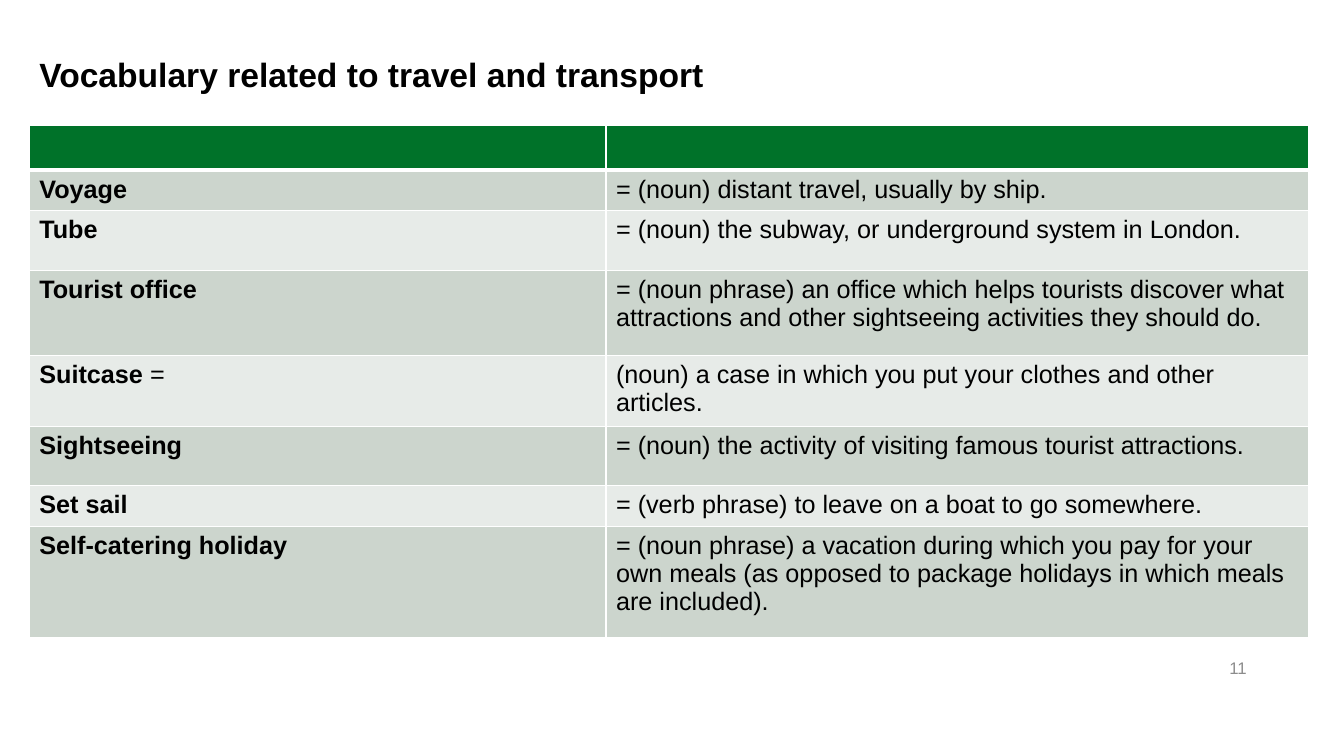
from lxml.etree import SubElement
from pptx import Presentation
from pptx.dml.color import RGBColor
from pptx.enum.text import MSO_ANCHOR as Anchor, MSO_AUTO_SIZE as AutoSize, PP_ALIGN as Align
from pptx.oxml.ns import qn
from pptx.util import Inches, Pt

WIDTH, HEIGHT = Inches(13.33), Inches(7.5)
LEFT = 2.18
GREEN, BANDS = "007229", ("CCD5CD", "E7EBE8")
COLUMN_SHARES = (42.91, 52.29)
HEADER_SHARE = 6
VOCABULARY = [
    ("Voyage", "", "= (noun) distant travel, usually by ship.", 4.53),
    ("Tube", "", "= (noun) the subway, or underground system in London.", 7.87),
    ("Tourist office", "", "= (noun phrase) an office which helps tourists discover what "
     "attractions and other sightseeing activities they should do.", 11.33),
    ("Suitcase", " =", "(noun) a case in which you put your clothes and other articles.", 7.87),
    ("Sightseeing", "", "= (noun) the activity of visiting famous tourist attractions.", 7.87),
    ("Set sail", "", "= (verb phrase) to leave on a boat to go somewhere.", 4.53),
    ("Self-catering holiday", "", "= (noun phrase) a vacation during which you pay for your own "
     "meals (as opposed to package holidays in which meals are included).", 14.67),
]


def across(percent):
    return round(WIDTH * percent / 100)


def down(percent):
    return round(HEIGHT * percent / 100)


def frame(left, top, width, height):
    return across(left), down(top), across(width), down(height)


def color(code):
    return RGBColor.from_string(code)


def apply(target, formats):
    for key, value in formats.items():
        setattr(target, key, value)


def write(paragraph, text, size=18, bold=False, ink="000000"):
    run = paragraph.add_run()
    run.text = text
    apply(run.font, {"name": "Arial", "size": Pt(size), "bold": bold})
    run.font.color.rgb = color(ink)


def style_cell(cell, fill, bottom=1):
    properties = cell._tc.get_or_add_tcPr()
    for side, points in {"lnL": 1, "lnR": 1, "lnT": 1, "lnB": bottom}.items():
        border = SubElement(properties, qn(f"a:{side}"), w=str(Pt(points)))
        SubElement(SubElement(border, qn("a:solidFill")), qn("a:srgbClr"), val="FFFFFF")
    cell.fill.solid()
    cell.fill.fore_color.rgb = color(fill)


def add_title(slide, text):
    title = slide.shapes.title
    apply(title, dict(zip(("left", "top", "width", "height"), frame(LEFT, 6.4, 62.79, 6.67))))
    apply(title.text_frame, {"word_wrap": True, "vertical_anchor": Anchor.TOP,
                             "auto_size": AutoSize.SHAPE_TO_FIT_TEXT})
    heading = title.text_frame.paragraphs[0]
    heading.alignment = Align.LEFT
    write(heading, text, size=24, bold=True)


def add_vocabulary(slide):
    row_shares = [HEADER_SHARE] + [entry[-1] for entry in VOCABULARY]
    area = frame(LEFT, 16.53, sum(COLUMN_SHARES), sum(row_shares))
    vocabulary = slide.shapes.add_table(len(row_shares), len(COLUMN_SHARES), *area).table
    for column, share in zip(vocabulary.columns, COLUMN_SHARES):
        column.width = across(share)
    for row, share in zip(vocabulary.rows, row_shares):
        row.height = down(share)
    for header in vocabulary.rows[0].cells:
        style_cell(header, GREEN, bottom=3)
    for index, (term, sign, meaning, _) in enumerate(VOCABULARY):
        term_cell, meaning_cell = vocabulary.rows[index + 1].cells
        for cell in (term_cell, meaning_cell):
            style_cell(cell, BANDS[index % 2])
        term_line = term_cell.text_frame.paragraphs[0]
        write(term_line, term, bold=True)
        if sign:
            write(term_line, sign)
        write(meaning_cell.text_frame.paragraphs[0], meaning)


def add_page_number(slide, number):
    page = slide.shapes.add_textbox(*frame(89.87, 85.6, 4.5, 5.33)).text_frame
    apply(page, {"word_wrap": True, "vertical_anchor": Anchor.MIDDLE})
    page.paragraphs[0].alignment = Align.CENTER
    write(page.paragraphs[0], number, size=12, ink="8C8C8C")


def main():
    deck = Presentation()
    apply(deck, {"slide_width": WIDTH, "slide_height": HEIGHT})
    slide = deck.slides.add_slide(deck.slide_layouts.get_by_name("Title Only"))
    add_vocabulary(slide)
    add_page_number(slide, "11")
    add_title(slide, "Vocabulary related to travel and transport")
    deck.save("out.pptx")


if __name__ == "__main__":
    main()
